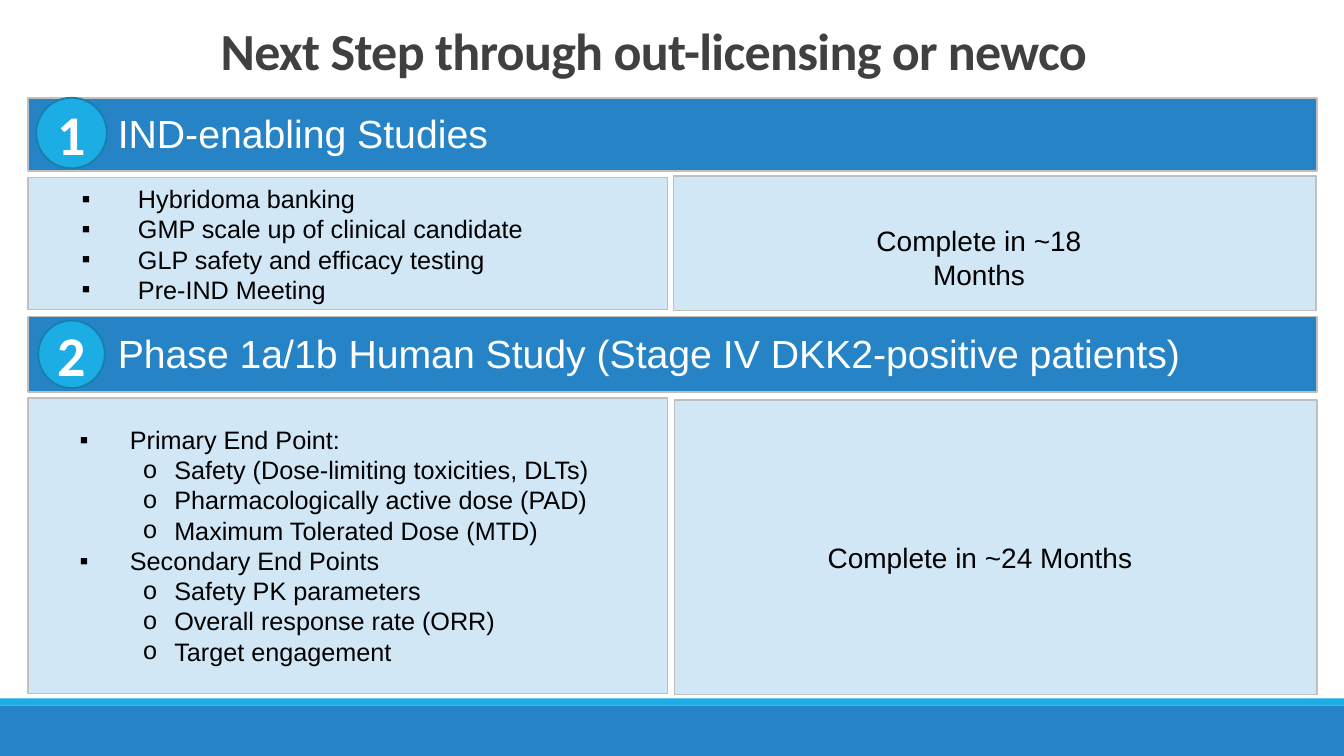
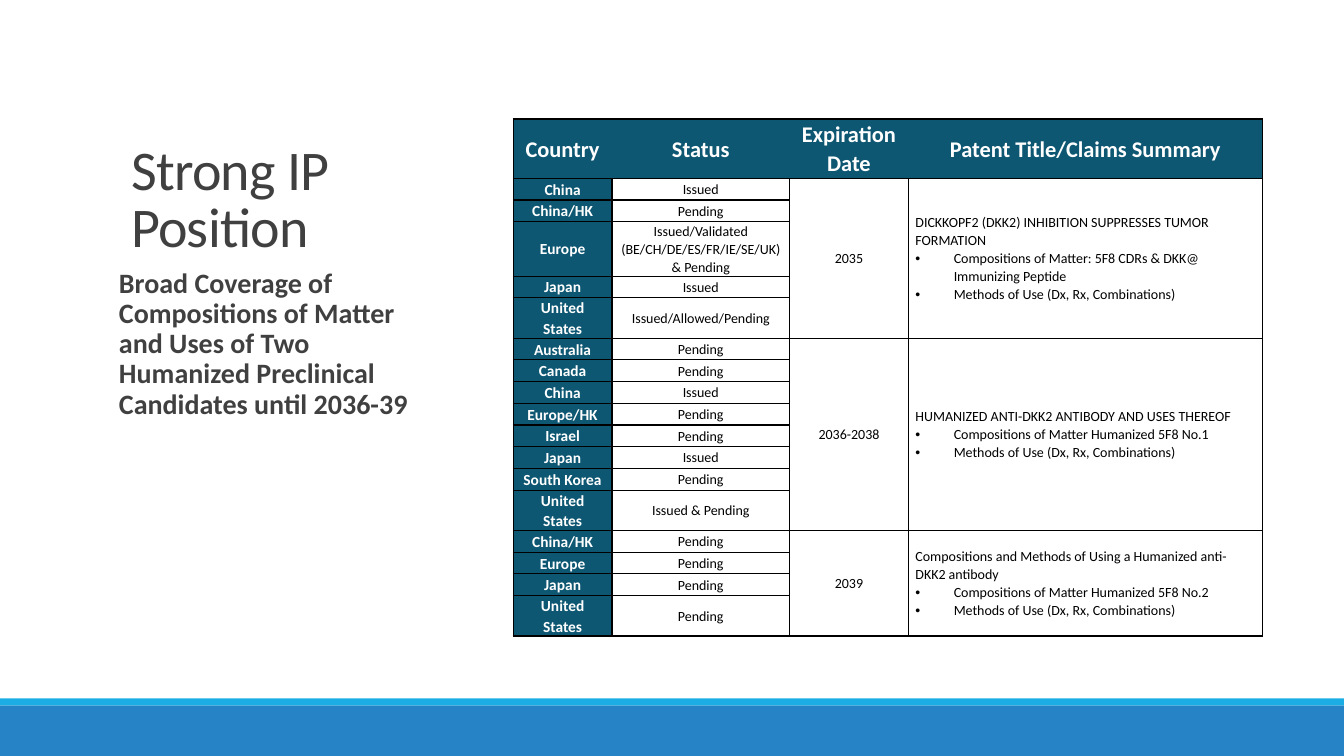
from lxml import etree
from pptx import Presentation
from pptx.dml.color import RGBColor
from pptx.enum.shapes import MSO_SHAPE
from pptx.enum.text import MSO_ANCHOR, MSO_AUTO_SIZE, PP_ALIGN
from pptx.oxml.ns import qn
from pptx.util import Inches, Pt

RECTANGLE, OVAL = MSO_SHAPE.RECTANGLE, MSO_SHAPE.OVAL
LEFT, CENTER = PP_ALIGN.LEFT, PP_ALIGN.CENTER
MIDDLE, BOTTOM = MSO_ANCHOR.MIDDLE, MSO_ANCHOR.BOTTOM
NO_AUTOFIT = MSO_AUTO_SIZE.NONE

BLUE = RGBColor(0x26, 0x83, 0xC6)
CYAN = RGBColor(0x1C, 0xAD, 0xE4)
CYAN_EDGE = RGBColor(0x15, 0x80, 0xA9)
PALE_BLUE = RGBColor(0xD1, 0xE7, 0xF6)
TEAL = RGBColor(0x0E, 0x57, 0x72)
GRAY_EDGE = RGBColor(0xBF, 0xBF, 0xBF)
DARK_GRAY = RGBColor(0x40, 0x40, 0x40)
WHITE = RGBColor(0xFF, 0xFF, 0xFF)
BLACK = RGBColor(0, 0, 0)

SLIDE_WIDTH, SLIDE_HEIGHT = 13.33, 7.5
FOOTER_TOP = 6.93
FOOTER_BANDS = [(FOOTER_TOP, 0.07, CYAN), (7, 0.5, BLUE)]  # top, height, colour
NO_TABLE_STYLE = "{2D5ABB26-0587-4C30-8999-92F81FD0307C}"

# Bullet styles: character, left margin, hanging indent
STUDY = ("▪", 1, 0.56)
END_POINT = ("▪", 0.5, 0.5)
MEASURE = ("o", 0.94, 0.31)
CLAIM = ("•", 0.38, 0.38)

STEPS_TITLE = "Next Step through out-licensing or newco"
BAND_LEFT, BAND_WIDTH = 0.28, 12.78
STEPS = [
    {
        "heading": "IND-enabling Studies",
        "band": (0.97, 0.73), "heading_top": 1.04, "badge_at": (0.36, 0.97, 0.7, 0.7),
        "panels": [(0.28, 1.76, 6.34, 1.31), (6.68, 1.75, 6.37, 1.33)],
        "details_at": (0.27, 1.77, 6.21, 1.31),
        "details": [
            ("Hybridoma banking", STUDY),
            ("GMP scale up of clinical candidate", STUDY),
            ("GLP safety and efficacy testing", STUDY),
            ("Pre-IND Meeting", STUDY),
        ],
        "timing": "Complete in ~18 Months", "timing_at": (8.1, 2.17, 3.22, 0.44),
    },
    {
        "heading": "Phase 1a/1b Human Study (Stage IV DKK2-positive patients)",
        "band": (3.14, 0.75), "heading_top": 3.22, "badge_at": (0.38, 3.18, 0.66, 0.67),
        "panels": [(0.28, 3.95, 6.34, 2.93), (6.69, 3.97, 6.37, 2.92)],
        "details_at": (0.69, 4.16, 5.69, 2.52),
        "details": [
            ("Primary End Point:", END_POINT),
            ("Safety (Dose-limiting toxicities, DLTs)", MEASURE),
            ("Pharmacologically active dose (PAD)", MEASURE),
            ("Maximum Tolerated Dose (MTD)", MEASURE),
            ("Secondary End Points", END_POINT),
            ("Safety PK parameters", MEASURE),
            ("Overall response rate (ORR)", MEASURE),
            ("Target engagement", MEASURE),
        ],
        "timing": "Complete in ~24 Months", "timing_at": (7.52, 5.31, 4.4, 0.44),
    },
]

PATENTS_TITLE = "Strong IP Position"
COVERAGE = ("Broad Coverage of Compositions of Matter and Uses of Two "
            "Humanized Preclinical Candidates until 2036-39")
HEADERS = ["Country", "Status", "Expiration Date", "Patent Title/Claims Summary"]
METHODS = "Methods of Use (Dx, Rx, Combinations)"
PATENT_FAMILIES = [
    {
        "expires": "2035",
        "title": "DICKKOPF2 (DKK2) INHIBITION SUPPRESSES TUMOR FORMATION",
        "claims": ["Compositions of Matter: 5F8 CDRs & DKK@ Immunizing Peptide", METHODS],
        "filings": [
            ("China", "Issued"),
            ("China/HK", "Pending"),
            ("Europe", "Issued/Validated (BE/CH/DE/ES/FR/IE/SE/UK) & Pending"),
            ("Japan", "Issued"),
            ("United States", "Issued/Allowed/Pending"),
        ],
    },
    {
        "expires": "2036-2038",
        "title": "HUMANIZED ANTI-DKK2 ANTIBODY AND USES THEREOF",
        "claims": ["Compositions of Matter Humanized 5F8 No.1", METHODS],
        "filings": [
            ("Australia", "Pending"),
            ("Canada", "Pending"),
            ("China", "Issued"),
            ("Europe/HK", "Pending"),
            ("Israel", "Pending"),
            ("Japan", "Issued"),
            ("South Korea", "Pending"),
            ("United States", "Issued & Pending"),
        ],
    },
    {
        "expires": "2039",
        "title": "Compositions and Methods of Using a Humanized anti-DKK2 antibody",
        "claims": ["Compositions of Matter Humanized 5F8 No.2", METHODS],
        "filings": [
            ("China/HK", "Pending"),
            ("Europe", "Pending"),
            ("Japan", "Pending"),
            ("United States", "Pending"),
        ],
    },
]
TABLE_LEFT, TABLE_TOP, TABLE_HEIGHT = 5.09, 1.18, 5.13
COLUMN_WIDTHS = [0.98, 1.76, 1.18, 3.51, 0.16]  # the last column is an empty margin
HEADER_HEIGHT, TWO_LINE_HEIGHT = 0.59, 0.4
SPLIT_HEIGHTS = [0.37, 0.17]  # a three-line filing spans two rows


def inches(values):
    return [Inches(value) for value in values]


def add_box(slide, kind, at, fill, edge=None):
    box = slide.shapes.add_shape(kind, *inches(at))
    box.shadow.inherit = False
    box.fill.solid()
    box.fill.fore_color.rgb = fill
    if edge is None:
        box.line.fill.background()
    else:
        box.line.color.rgb = edge
        box.line.width = Pt(1.25)
    return box


def write(frame, lines, size, color, font="Arial", bold=False, align=LEFT,
          spacing=None, tracking=None):
    """Fill a text frame with (text, bullet style or None) lines."""
    for number, (text, bullet) in enumerate(lines):
        para = frame.add_paragraph() if number else frame.paragraphs[0]
        para.text = text
        para.alignment = align
        if spacing:
            para.line_spacing = spacing
        if bullet:
            character, margin, hanging = bullet
            properties = para._p.get_or_add_pPr()
            properties.set("marL", str(Inches(margin)))
            properties.set("indent", str(-Inches(hanging)))
            etree.SubElement(properties, qn("a:buFont"), typeface="Arial")
            etree.SubElement(properties, qn("a:buChar"), char=character)
        para.font.name = font
        para.font.size = Pt(size)
        para.font.bold = bold
        para.font.color.rgb = color
        if tracking:
            para.font._rPr.set("spc", str(round(tracking * 100)))


def add_text(slide, at, lines, size, color, **style):
    frame = slide.shapes.add_textbox(*inches(at)).text_frame
    frame.word_wrap = True
    write(frame, lines, size, color, **style)
    return frame


def add_slide(deck, title, at, size, **style):
    """Add a title-only slide with the footer bands and a formatted title."""
    slide = deck.slides.add_slide(deck.slide_layouts[5])
    for top, height, color in FOOTER_BANDS:
        add_box(slide, RECTANGLE, (0, top, SLIDE_WIDTH, height), color)
    holder = slide.shapes.title
    holder.left, holder.top, holder.width, holder.height = inches(at)
    frame = holder.text_frame
    frame.auto_size = NO_AUTOFIT
    frame.word_wrap = True
    frame.vertical_anchor = BOTTOM
    write(frame, [(title, None)], size, DARK_GRAY, font="Calibri", tracking=-0.5, **style)
    return slide


def add_step(slide, number, step):
    band_top, band_height = step["band"]
    add_box(slide, RECTANGLE, (BAND_LEFT, band_top, BAND_WIDTH, band_height), BLUE, GRAY_EDGE)
    add_text(slide, (1.07, step["heading_top"], 11.7, 0.57), [(step["heading"], None)], 28, WHITE)

    badge = add_box(slide, OVAL, step["badge_at"], CYAN, CYAN_EDGE)
    badge.text_frame.word_wrap = False
    badge.text_frame.vertical_anchor = MIDDLE
    write(badge.text_frame, [(str(number), None)], 40, WHITE, font="Calibri",
          bold=True, align=CENTER)

    for at in step["panels"]:
        add_box(slide, RECTANGLE, at, PALE_BLUE, GRAY_EDGE)
    add_text(slide, step["details_at"], step["details"], 18, BLACK)
    add_text(slide, step["timing_at"], [(step["timing"], None)], 20, BLACK, align=CENTER)


def format_cell(cell, fill, sides):
    """Set margins, anchor, fill and black borders on the sides given as L, R, T, B."""
    cell.margin_left = cell.margin_right = Inches(0.07)
    cell.margin_top = cell.margin_bottom = 0
    cell.vertical_anchor = MIDDLE
    properties = cell._tc.get_or_add_tcPr()
    for side in sides:
        line = etree.SubElement(properties, qn("a:ln" + side), w=str(Pt(1)))
        paint = etree.SubElement(line, qn("a:solidFill"))
        etree.SubElement(paint, qn("a:srgbClr"), val=str(BLACK))
    if fill is None:
        cell.fill.background()
    else:
        cell.fill.solid()
        cell.fill.fore_color.rgb = fill


def write_cell(cell, lines, size=10, color=BLACK, bold=False, align=CENTER):
    write(cell.text_frame, lines, size, color, font="Calibri", bold=bold,
          align=align, spacing=1.07)


def filing_heights(filings):
    """List the row heights of each filing; one-line filings share what is left."""
    heights = []
    for country, status in filings:
        if len(status) > 30:
            heights.append(SPLIT_HEIGHTS)
        else:
            heights.append([TWO_LINE_HEIGHT] if country == "United States" else [])
    rest = TABLE_HEIGHT - HEADER_HEIGHT - sum(map(sum, heights))
    return [rows or [rest / heights.count([])] for rows in heights]


def add_patent_table(slide):
    spans = filing_heights([filing for family in PATENT_FAMILIES for filing in family["filings"]])
    heights = [HEADER_HEIGHT] + sum(spans, [])
    at = (TABLE_LEFT, TABLE_TOP, sum(COLUMN_WIDTHS), TABLE_HEIGHT)
    table = slide.shapes.add_table(len(heights), len(COLUMN_WIDTHS), *inches(at)).table
    table._tbl.tblPr.find(qn("a:tableStyleId")).text = NO_TABLE_STYLE
    for column, width in zip(table.columns, COLUMN_WIDTHS):
        column.width = Inches(width)

    last = len(HEADERS) - 1
    for column, header in enumerate(HEADERS):
        outer = ("L" if column == 0 else "") + ("R" if column == last else "")
        format_cell(table.cell(0, column), TEAL, outer + "TB")
        write_cell(table.cell(0, column), [(header, None)], 16, WHITE, bold=True)
        for row in range(1, len(heights)):
            format_cell(table.cell(row, column), None if column else TEAL, "LRTB")
    for row, height in enumerate(heights):
        table.rows[row].height = Inches(height)
        margin_cell = table.cell(row, last + 1)
        format_cell(margin_cell, None, "L")
        etree.SubElement(margin_cell.text_frame.paragraphs[0]._p, qn("a:endParaRPr"),
                         sz="800")

    span = iter(spans)
    row = 1
    for family in PATENT_FAMILIES:
        first = row
        for country, status in family["filings"]:
            end = row + len(next(span)) - 1
            if end > row:
                for column in (0, 1):
                    table.cell(row, column).merge(table.cell(end, column))
            write_cell(table.cell(row, 0), [(country, None)], 11, WHITE, bold=True)
            write_cell(table.cell(row, 1), [(status, None)])
            row = end + 1
        for column in (2, 3):
            table.cell(first, column).merge(table.cell(row - 1, column))
        write_cell(table.cell(first, 2), [(family["expires"], None)])
        summary = [(family["title"], None)] + [(claim, CLAIM) for claim in family["claims"]]
        write_cell(table.cell(first, 3), summary, align=LEFT)


def main():
    deck = Presentation()
    deck.slide_width, deck.slide_height = inches((SLIDE_WIDTH, SLIDE_HEIGHT))

    steps_slide = add_slide(deck, STEPS_TITLE, (0.91, 0.11, 11.15, 0.74), 37.2,
                            bold=True, align=CENTER)
    for number, step in enumerate(STEPS, 1):
        add_step(steps_slide, number, step)

    patents_slide = add_slide(deck, PATENTS_TITLE, (1.2, 0.31, 3.24, 2.31), 40, spacing=0.85)
    backdrop = add_box(patents_slide, RECTANGLE, (0, 0, SLIDE_WIDTH, FOOTER_TOP), WHITE)
    patents_slide.shapes._spTree.insert(2, backdrop._element)  # behind the title
    coverage = add_text(patents_slide, (1.18, 2.62, 3.22, 3.8), [(COVERAGE, None)], 20,
                        DARK_GRAY, font="Calibri", bold=True, spacing=0.9)
    coverage.margin_left = coverage.margin_right = 0
    add_patent_table(patents_slide)

    deck.save("out.pptx")


if __name__ == "__main__":
    main()
